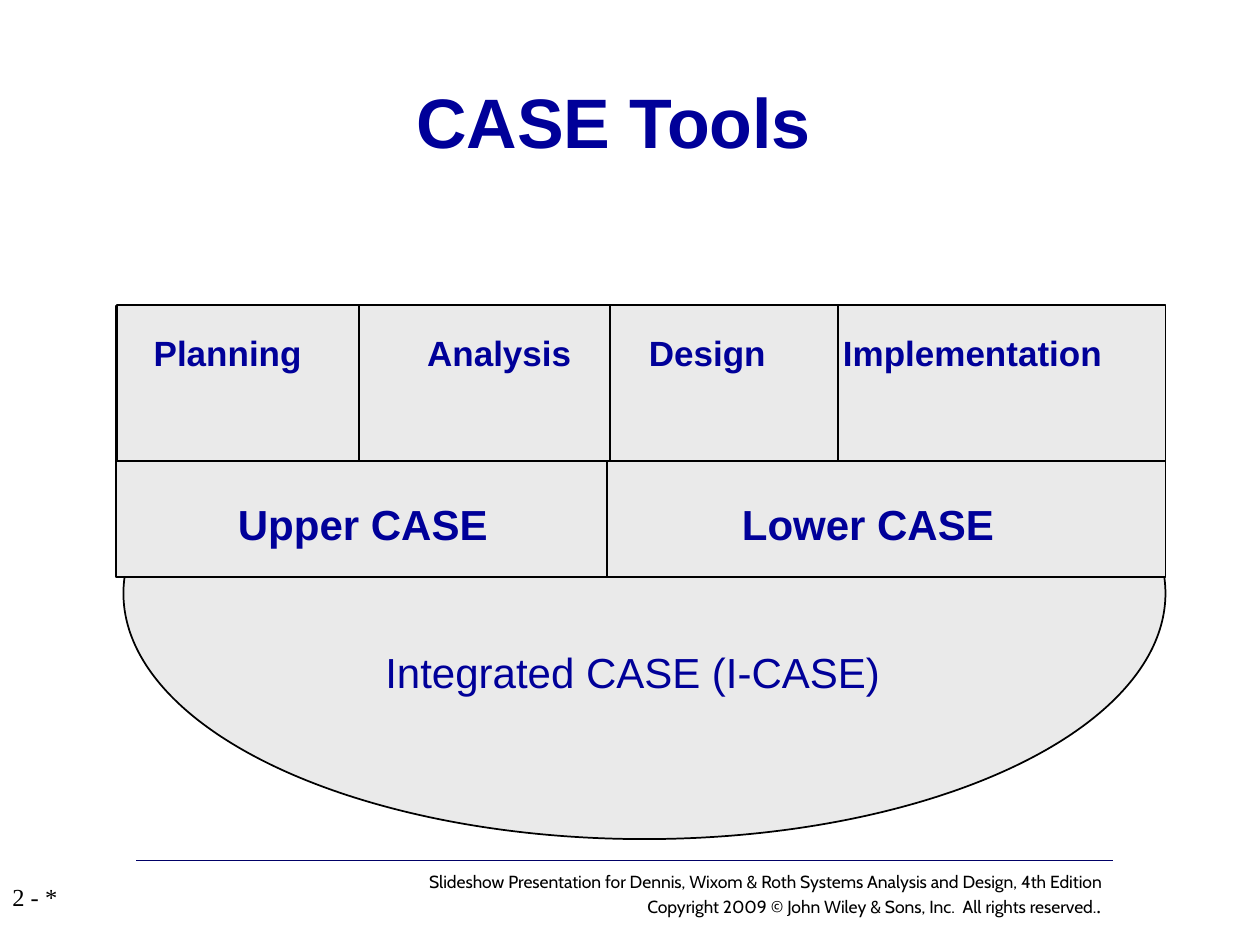
from pptx import Presentation
from pptx.dml.color import RGBColor
from pptx.enum import shapes, text
from pptx.oxml.ns import qn
from pptx.util import Inches, Pt
from lxml import etree

NAVY, BLACK, GREY, RULE = "000099", "000000", "EAEAEA", "000066"
LEFT, CENTER, RIGHT = text.PP_ALIGN.LEFT, text.PP_ALIGN.CENTER, text.PP_ALIGN.RIGHT
TOP, MIDDLE, BOTTOM = text.MSO_ANCHOR.TOP, text.MSO_ANCHOR.MIDDLE, text.MSO_ANCHOR.BOTTOM
RECT, OVAL = shapes.MSO_SHAPE.RECTANGLE, shapes.MSO_SHAPE.OVAL


def rgb(color):
    return RGBColor.from_string(color)


def add_block(slide, kind, left, top, width, height):
    block = slide.shapes.add_shape(
        kind, Inches(left), Inches(top), Inches(width), Inches(height))
    block.shadow.inherit = False
    block.fill.solid()
    block.fill.fore_color.rgb = rgb(GREY)
    block.line.color.rgb = rgb(BLACK)
    block.line.width = Pt(1)


def add_text(slide, box, lines, align=LEFT, anchor=TOP, tabs=(), inset=0.1, top_inset=0.05):
    """Each line is a list of (words, size, font, color, bold) runs; tabs are in inches."""
    frame = slide.shapes.add_textbox(*map(Inches, box)).text_frame
    frame.word_wrap = True
    frame.vertical_anchor = anchor
    frame.margin_left = Inches(inset)
    frame.margin_top = Inches(top_inset)
    for number, runs in enumerate(lines):
        paragraph = frame.add_paragraph() if number else frame.paragraphs[0]
        paragraph.alignment = align
        if tabs:
            stops = etree.SubElement(paragraph._p.get_or_add_pPr(), qn("a:tabLst"))
            for stop in tabs:
                etree.SubElement(stops, qn("a:tab"), pos=str(Inches(stop)), algn="l")
        for words, size, font, color, bold in runs:
            run = paragraph.add_run()
            run.text = words
            run.font.size = Pt(size)
            run.font.name = font
            run.font.bold = bold
            run.font.color.rgb = rgb(color)


def add_title(slide, left, top, width, height):
    add_text(slide, (left, top, width, height),
             [[("CASE Tools", 40, "Arial", NAVY, True)]], CENTER, MIDDLE)


def add_integrated_case(slide, left, top, width, height):
    add_block(slide, OVAL, left, top, width, height)
    add_text(slide, (left + 1.98, top + 2.32, 4.71, 0.5),
             [[("Integrated CASE (I-CASE)", 24, "Arial", NAVY, False)]])


def add_case_halves(slide, left, top, width, height):
    upper_width = 3.9
    add_block(slide, RECT, left + upper_width, top, width - upper_width, height)
    add_block(slide, RECT, left, top, upper_width, height)
    add_text(slide, (left + 0.87, top + 1.48, 6.2, 0.5),
             [[("Upper CASE\tLower CASE", 24, "Arial", NAVY, True)]], tabs=[4])


def add_phases(slide, left, top, height):
    # Drawn in this order, each overlap shows a single divider.
    for offset, width in [(3.74, 2.15), (5.72, 2.6), (0, 1.99), (1.92, 1.99)]:
        add_block(slide, RECT, left + offset, top, width, height)
    phases = ["Planning", "Analysis", "Design", "Implementation"]
    add_text(slide, (left - 0.18, top + 0.16, 8.33, 0.43),
             [[("\t".join(phases), 20, "Arial", NAVY, True)]],
             tabs=[2.17, 3.93, 5.47], inset=0.47)


def add_footer(slide, left, top, right):
    rule = slide.shapes.add_connector(
        shapes.MSO_CONNECTOR.STRAIGHT,
        Inches(left), Inches(top), Inches(right), Inches(top))
    rule.line.color.rgb = rgb(RULE)
    rule.line.width = Pt(0.75)
    etree.SubElement(rule._element.spPr, qn("a:effectLst"))
    credit = "Slideshow Presentation for Dennis, Wixom & Roth Systems Analysis and Design, 4th Edition"
    rights = "Copyright 2009 © John Wiley & Sons, Inc.  All rights reserved."
    add_text(slide, (left + 0.84, top, 6.92, 0.5),
             [[(credit, 10, "Cabin", BLACK, False)],
              [(rights, 10, "Cabin", BLACK, False),
               (".", 12, "Times New Roman", BLACK, False)]], RIGHT, BOTTOM)


def add_page_number(slide, left, top, width, height):
    add_text(slide, (left, top, width, height),
             [[("2 - *", 14, "Times New Roman", BLACK, False)]], top_inset=0)


def main():
    deck = Presentation()
    deck.slide_width, deck.slide_height = Inches(10), Inches(7.5)
    slide = deck.slides.add_slide(deck.slide_layouts[6])
    add_footer(slide, 1.08, 6.83, 8.83)
    add_page_number(slide, 0, 7, 0.83, 0.5)
    add_title(slide, 0.62, 0.33, 8.5, 1.25)
    add_integrated_case(slide, 0.98, 2.76, 8.27, 3.9)
    add_case_halves(slide, 0.92, 2.43, 8.33, 2.15)
    add_phases(slide, 0.93, 2.42, 1.24)
    deck.save("out.pptx")


if __name__ == "__main__":
    main()
